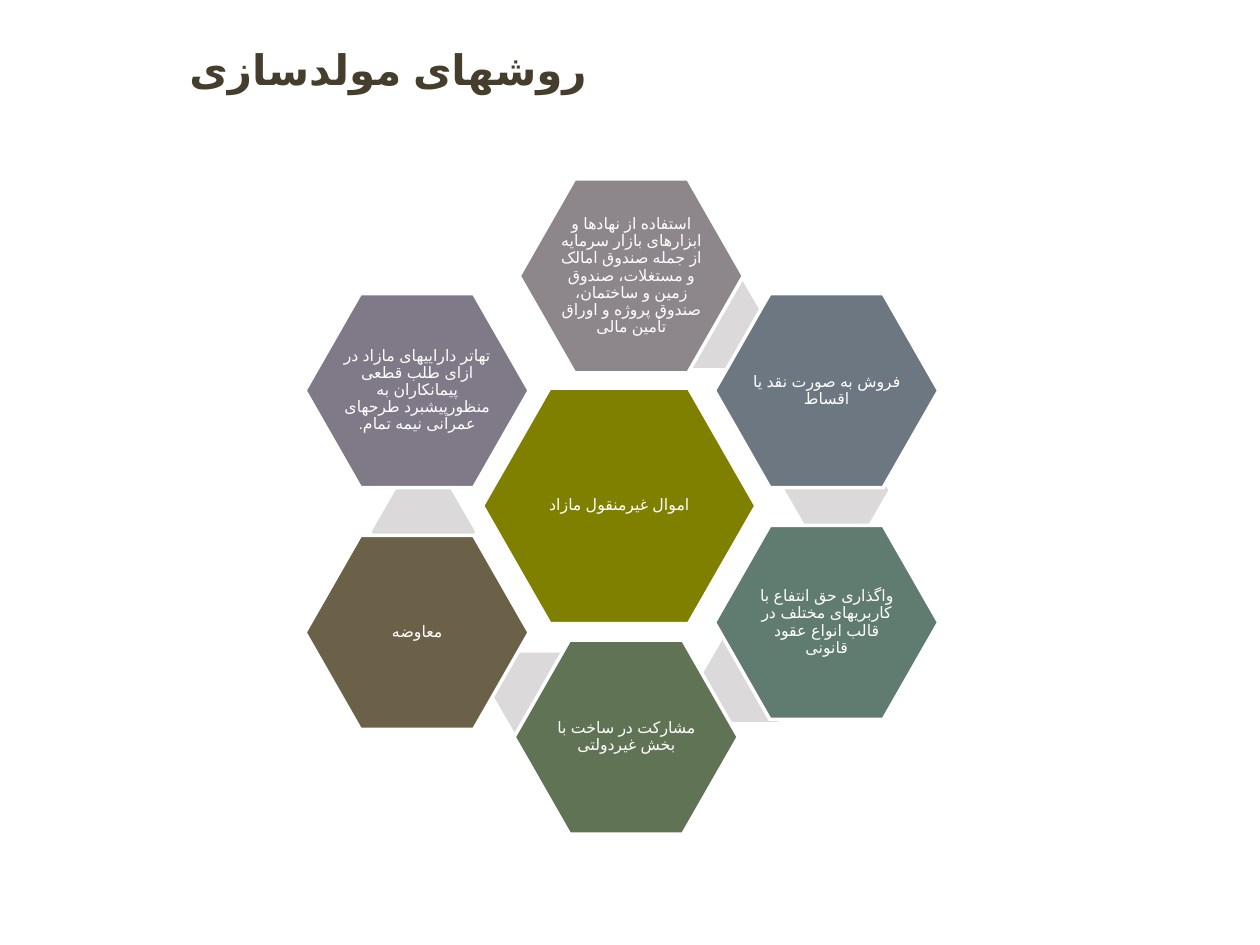
"""Build a slide with a ring of six hexagons around a central one."""
from lxml import etree
from pptx import Presentation
from pptx import util as u
from pptx.dml.color import RGBColor
from pptx.enum import lang, shapes, text
from pptx.oxml import ns

WHITE = RGBColor(0xFF, 0xFF, 0xFF)
TAB_GREY = RGBColor(0xDB, 0xD9, 0xDA)
TITLE_BROWN = RGBColor(0x45, 0x3E, 0x2D)
OLIVE = RGBColor(0x80, 0x80, 0x00)
MAUVE = RGBColor(0x8D, 0x87, 0x8B)
PURPLE = RGBColor(0x7F, 0x79, 0x88)
SLATE = RGBColor(0x6C, 0x77, 0x82)
TEAL = RGBColor(0x60, 0x7B, 0x6F)
GREEN = RGBColor(0x60, 0x73, 0x54)
BROWN = RGBColor(0x6B, 0x61, 0x49)

TITLE = "روشهای مولدسازی"
TITLE_BOX = (0, -0.08, 6.16, 1.25)
SCRIPT_FONT = "Arial"
PERSIAN = lang.MSO_LANGUAGE_ID.FARSI
TITLE_FONT = {"name": "Arial", "size": u.Pt(24), "bold": True, "language_id": PERSIAN}
LABEL_FONT = {"name": "Calibri", "size": u.Pt(9), "language_id": PERSIAN}
LABEL_FRAME = {
    "word_wrap": True,
    "vertical_anchor": text.MSO_ANCHOR.MIDDLE,
    **dict.fromkeys(("margin_left", "margin_top", "margin_right", "margin_bottom"), u.Inches(0.01)),
}
LABEL_PARA = {"alignment": text.PP_ALIGN.CENTER, "line_spacing": 0.9}

CORE_SIZE = (2.17, 1.87)
METHOD_SIZE = (1.78, 1.54)
TAB_SIZE = (0.82, 0.7)
LEFT_X, RIGHT_X, UPPER_Y = 2.42, 5.67, 2.33

CORE = ("اموال غیرمنقول مازاد", OLIVE, (3.83, 3.08))
METHODS = [
    ("استفاده از نهادها و ابزارهای بازار سرمایه از جمله صندوق امالک و مستغلات، "
     "صندوق زمین و ساختمان، صندوق پروژه و اوراق تأمین مالی", MAUVE, (4.12, 1.42)),
    ("تهاتر داراییهای مازاد در ازای طلب قطعی پیمانکاران به منظورپیشبرد "
     "طرحهای عمرانی نیمه تمام.", PURPLE, (LEFT_X, UPPER_Y)),
    ("فروش به صورت نقد یا اقساط", SLATE, (RIGHT_X, UPPER_Y)),
    ("واگذاری حق انتفاع با کاربریهای مختلف در قالب انواع عقود قانونی", TEAL, (RIGHT_X, 4.17)),
    ("مشارکت در ساخت با بخش غیردولتی", GREEN, (4.08, 5.08)),
    ("معاوضه", BROWN, (LEFT_X, 4.25)),
]
TABS = [(5.27, 2.22), (6.23, 3.54), (5.56, 5.03), (3.92, 5.18), (2.95, 3.87)]


def apply(target, values):
    for name, value in values.items():
        setattr(target, name, value)


def add_span(para, words, font, color):
    span = para.add_run()
    span.text = words
    apply(span.font, font)
    span.font.color.rgb = color
    script = etree.SubElement(span._r.get_or_add_rPr(), ns.qn("a:cs"))
    script.set("typeface", SCRIPT_FONT)


def add_hexagon(page, corner, size, color, slant):
    box = page.shapes.add_shape(shapes.MSO_SHAPE.HEXAGON, *map(u.Inches, corner + size))
    box.adjustments[0] = slant
    box.adjustments[1] = 1.155
    box.shadow.inherit = False
    box.fill.solid()
    box.fill.fore_color.rgb = color
    box.line.fill.background()
    return box


def add_labelled_hexagon(page, label, color, corner, size):
    box = add_hexagon(page, corner, size, color, 0.286)
    box.line.color.rgb = WHITE
    box.line.width = u.Pt(2)
    apply(box.text_frame, LABEL_FRAME)
    para = box.text_frame.paragraphs[0]
    apply(para, LABEL_PARA)
    para._p.get_or_add_pPr().set("rtl", "1")
    add_span(para, label, LABEL_FONT, WHITE)


def add_title(page):
    title = page.shapes.title
    apply(title, dict(zip(("left", "top", "width", "height"), map(u.Inches, TITLE_BOX))))
    title.text_frame.vertical_anchor = text.MSO_ANCHOR.MIDDLE
    para = title.text_frame.paragraphs[0]
    para.alignment = text.PP_ALIGN.CENTER
    add_span(para, TITLE, TITLE_FONT, TITLE_BROWN)


def main():
    deck = Presentation()
    deck.slide_width, deck.slide_height = u.Inches(10), u.Inches(7.5)
    page = deck.slides.add_slide(deck.slide_layouts[5])
    add_title(page)
    for corner in TABS:
        add_hexagon(page, corner, TAB_SIZE, TAB_GREY, 0.289)
    add_labelled_hexagon(page, *CORE, CORE_SIZE)
    for method in METHODS:
        add_labelled_hexagon(page, *method, METHOD_SIZE)
    deck.save("out.pptx")


if __name__ == "__main__":
    main()
